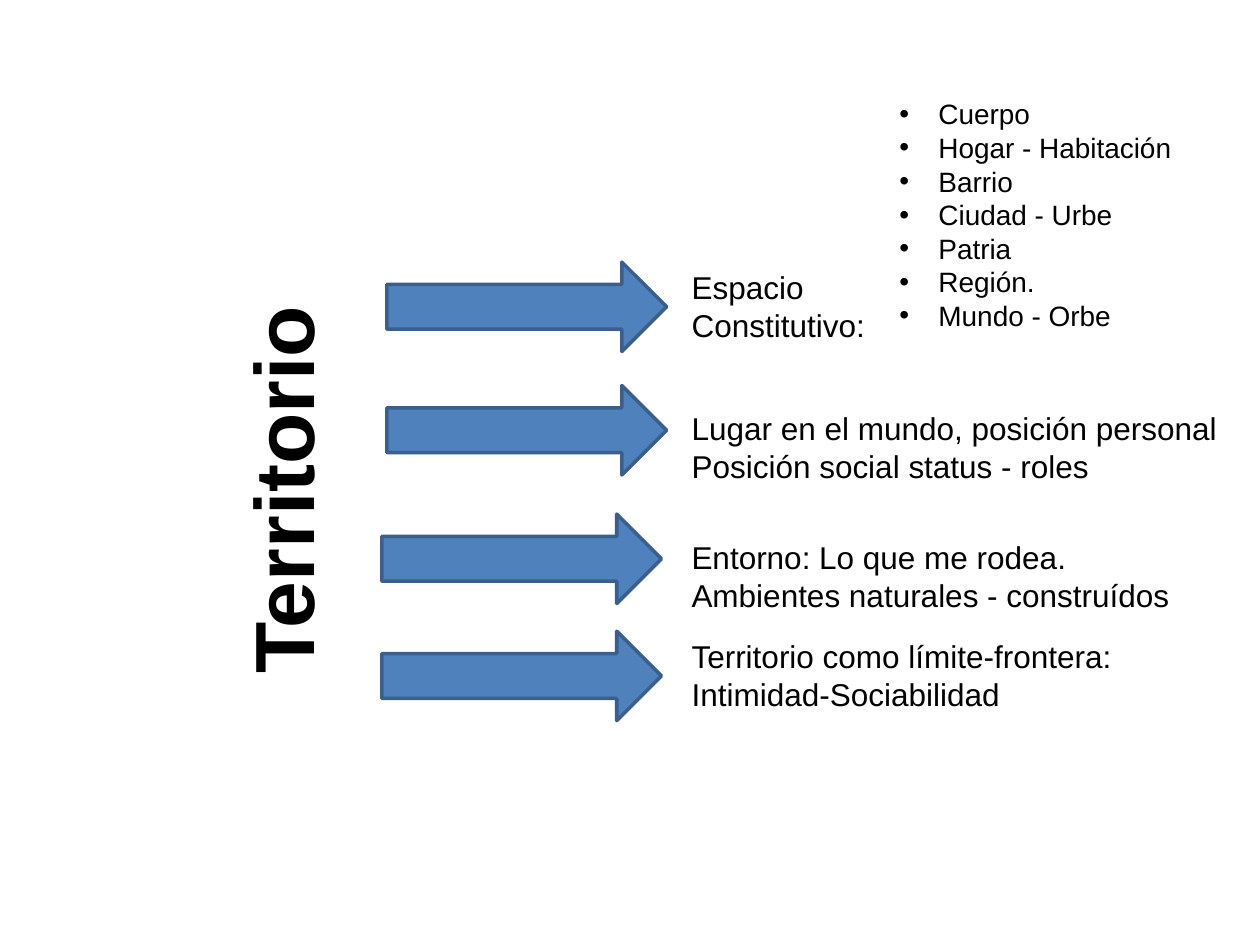
import pptx
import pptx.util
import pptx.dml.color
import pptx.enum.shapes
import pptx.enum.text
import pptx.oxml.ns
import lxml.etree

COLORS = {"paper": "FFFFFF", "ink": "000000", "arrow": "4F81BD", "edge": "3A5F8C"}
COLUMNS, ROWS = 100, 75
TEXT_COLUMN = 53.9
BAND_HEIGHT = 7.1
ARROW_WIDTH = 22.2

CONCEPTS = [
    {"lines": ["Espacio Constitutivo:"], "width": 16.5,
     "text_row": 20.8, "arrow_row": 20.8, "arrow_column": 30.7},
    {"lines": ["Lugar en el mundo, posición personal", "Posición social status - roles"],
     "width": 44.9, "text_row": 32, "arrow_row": 30.6, "arrow_column": 30.7},
    {"lines": ["Entorno: Lo que me rodea. Ambientes naturales - construídos"],
     "width": 41.7, "text_row": 42.2, "arrow_row": 40.8, "arrow_column": 30.3},
    {"lines": ["Territorio como límite-frontera: Intimidad-Sociabilidad"],
     "width": 40.2, "text_row": 50.1, "arrow_row": 50.1, "arrow_column": 30.3},
]
SCALES = ["Cuerpo", "Hogar - Habitación", "Barrio", "Ciudad - Urbe",
          "Patria", "Región.", "Mundo - Orbe"]


def color(name):
    return pptx.dml.color.RGBColor.from_string(COLORS[name])


def add_bullet(para, indent):
    properties = para._p.get_or_add_pPr()
    properties.set("marL", str(indent))
    properties.set("indent", str(-indent))
    for tag, attribute, value in (("a:buFont", "typeface", "Arial"),
                                  ("a:buChar", "char", "•")):
        element = lxml.etree.SubElement(properties, pptx.oxml.ns.qn(tag))
        element.set(attribute, value)


def write(frame, lines, size=18, bold=False, align="LEFT", bullets=False):
    for index, line in enumerate(lines):
        para = frame.paragraphs[0] if index == 0 else frame.add_paragraph()
        para.alignment = getattr(pptx.enum.text.PP_ALIGN, align)
        if bullets:
            add_bullet(para, pptx.util.Inches(0.31))
        span = para.add_run()
        span.text = line
        span.font.name = "Arial"
        span.font.size = pptx.util.Pt(size)
        span.font.bold = bold
        span.font.color.rgb = color("ink")


class Board:
    def __init__(self, deck):
        self.deck = deck
        self.page = deck.slides.add_slide(deck.slide_layouts[6])
        self.page.background.fill.solid()
        self.page.background.fill.fore_color.rgb = color("paper")

    def place(self, column, row, width, height):
        across = self.deck.slide_width / COLUMNS
        down = self.deck.slide_height / ROWS
        return [round(value) for value in
                (column * across, row * down, width * across, height * down)]

    def text(self, column, row, width, height, lines, rotation=0, **style):
        box = self.page.shapes.add_textbox(*self.place(column, row, width, height))
        box.rotation = rotation
        box.text_frame.word_wrap = True
        box.text_frame.auto_size = pptx.enum.text.MSO_AUTO_SIZE.SHAPE_TO_FIT_TEXT
        write(box.text_frame, lines, **style)

    def arrow(self, column, row, width, height):
        shape = self.page.shapes.add_shape(
            pptx.enum.shapes.MSO_SHAPE.RIGHT_ARROW, *self.place(column, row, width, height))
        shape.shadow.inherit = False
        shape.fill.solid()
        shape.fill.fore_color.rgb = color("arrow")
        shape.line.color.rgb = color("edge")
        shape.line.width = pptx.util.Pt(2)


def main():
    deck = pptx.Presentation()
    deck.slide_width = pptx.util.Inches(10)
    deck.slide_height = pptx.util.Inches(7.5)
    board = Board(deck)
    board.text(5.3, 34.3, 34.1, 9.1, ["Territorio"], rotation=270,
               size=48, bold=True, align="CENTER")
    board.text(70.4, 7.2, 25.3, 19.9, SCALES, size=16, bullets=True)
    for concept in CONCEPTS:
        board.text(TEXT_COLUMN, concept["text_row"], concept["width"], BAND_HEIGHT,
                   concept["lines"])
        board.arrow(concept["arrow_column"], concept["arrow_row"], ARROW_WIDTH, BAND_HEIGHT)
    deck.save("out.pptx")


if __name__ == "__main__":
    main()
